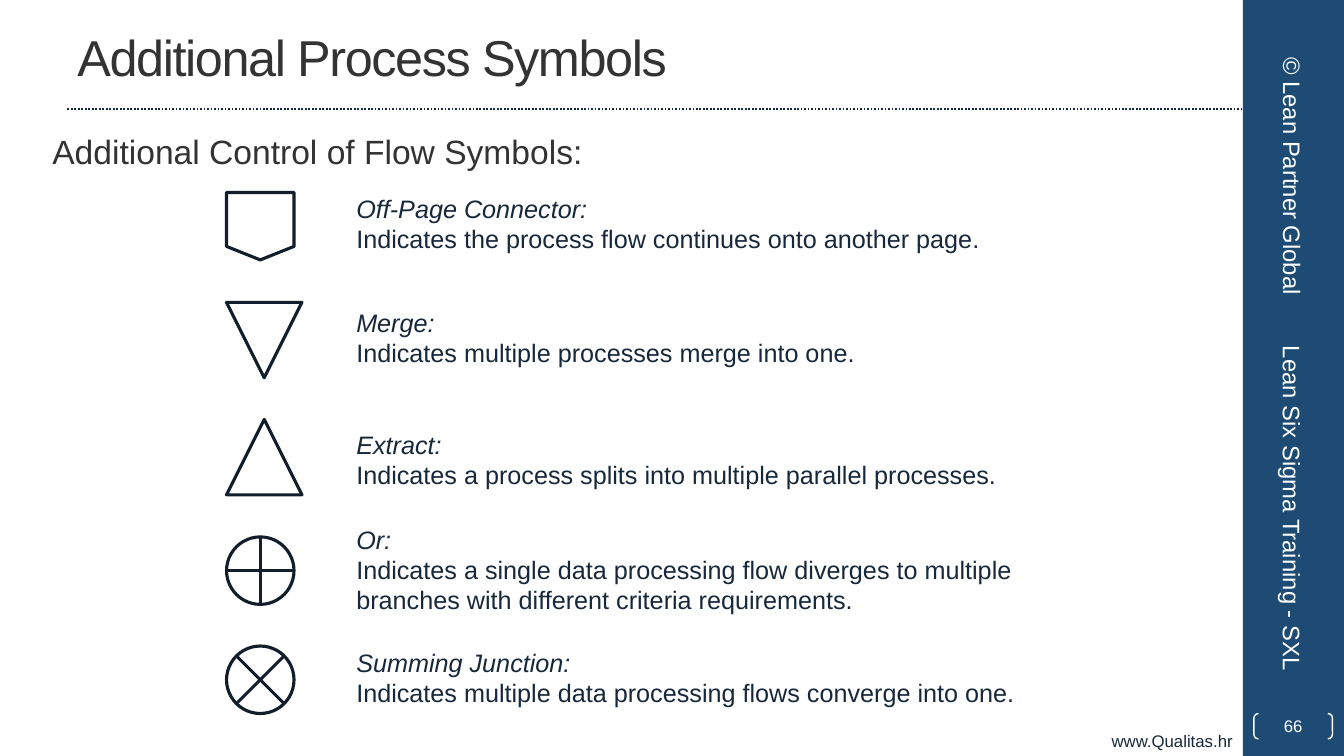
from lxml import etree
from pptx import Presentation
from pptx.dml.color import RGBColor
from pptx.enum import dml, shapes, text
from pptx.oxml import ns
from pptx.util import Cm, Pt

NAVY = RGBColor(0x18, 0x28, 0x3B)
OUTLINE = RGBColor(0x12, 0x1E, 0x2C)
RULE = RGBColor(0x17, 0x27, 0x3B)
CHARCOAL = RGBColor(0x33, 0x33, 0x33)
BLUE = RGBColor(0x1D, 0x4B, 0x74)
WHITE = RGBColor(0xFF, 0xFF, 0xFF)
LEFT, CENTER, RIGHT = text.PP_ALIGN.LEFT, text.PP_ALIGN.CENTER, text.PP_ALIGN.RIGHT
TOP, MIDDLE = text.MSO_ANCHOR.TOP, text.MSO_ANCHOR.MIDDLE
KIND = shapes.MSO_SHAPE

prs = Presentation()
prs.slide_width, prs.slide_height = Cm(33.87), Cm(19.05)
slide = prs.slides.add_slide(prs.slide_layouts[6])


def write(shape, lines, size, color, align=LEFT, anchor=TOP):
    frame = shape.text_frame
    frame.word_wrap = True
    frame.vertical_anchor = anchor
    frame.text = "\n".join(lines)
    for paragraph in frame.paragraphs:
        paragraph.alignment = align
        paragraph.font.name = "Arial"
        paragraph.font.size = Pt(size)
        paragraph.font.color.rgb = color
    return frame.paragraphs


def add_box(left, top, width, height):
    return slide.shapes.add_textbox(Cm(left), Cm(top), Cm(width), Cm(height))


# Side band
band = slide.shapes.add_shape(KIND.RECTANGLE, Cm(31.32), 0, Cm(2.55), Cm(19.05))
band.shadow.inherit = False
band.fill.solid()
band.fill.fore_color.rgb = BLUE
band.line.fill.background()

# Web address and dotted rule
write(add_box(0, 18.28, 31.32, 0.77), ["www.Qualitas.hr"], 12, NAVY, RIGHT)
rule = slide.shapes.add_connector(
    shapes.MSO_CONNECTOR.STRAIGHT, Cm(1.7), Cm(2.74), Cm(31.32), Cm(2.74))
rule.line.color.rgb = RULE
rule.line.width = Pt(1.25)
rule.line.dash_style = dml.MSO_LINE.ROUND_DOT
etree.SubElement(rule._element.spPr, ns.qn("a:effectLst"))

# Title
title = write(add_box(1.7, 0.08, 28.22, 2.67),
              ["Additional Process Symbols"], 36, CHARCOAL, anchor=MIDDLE)[0]
title.runs[0]._r.get_or_add_rPr().set("spc", "-100")

# Bulleted heading
heading_box = add_box(1.07, 3.18, 29.92, 1.2)
heading_format = heading_box.text_frame.paragraphs[0]._p.get_or_add_pPr()
heading_format.set("marL", str(Cm(0.95)))
heading_format.set("indent", str(Cm(-0.64)))
bullet_color = etree.SubElement(heading_format, ns.qn("a:buClr"))
etree.SubElement(bullet_color, ns.qn("a:srgbClr"), val=str(NAVY))
etree.SubElement(heading_format, ns.qn("a:buFont"), typeface="Arial")
etree.SubElement(heading_format, ns.qn("a:buChar"), char="•")
write(heading_box, ["Additional Control of Flow Symbols:"], 24, CHARCOAL)

# Page number in brackets
page_number = slide.shapes.add_shape(
    KIND.DOUBLE_BRACKET, Cm(31.6), Cm(17.98), Cm(1.98), Cm(0.64))
page_number.shadow.inherit = False
page_number.adjustments[0] = 0.18
page_number.fill.background()
page_number.line.color.rgb = WHITE
page_number.line.width = Pt(1)
frame = page_number.text_frame
frame.margin_left = frame.margin_right = frame.margin_top = frame.margin_bottom = 0
write(page_number, ["66"], 12, WHITE, CENTER, MIDDLE)

# Turned lines on the band
for left, top, width, line, align in [
    (28.55, 3.76, 8.05, "© Lean Partner Global", CENTER),
    (27.91, 12.45, 9.32, "Lean Six Sigma Training - SXL", LEFT),
]:
    side_line = add_box(left, top, width, 1.35)
    side_line.rotation = 90
    write(side_line, [line], 17, WHITE, align, MIDDLE)

# Symbols with their meanings: kind, symbol top, symbol size, text top, name, meaning
SMALL, LARGE = 1.7, 1.9
symbols = [
    (KIND.FLOWCHART_OFFPAGE_CONNECTOR, 4.85, SMALL, 4.75, "Off-Page Connector:",
     "Indicates the process flow continues onto another page."),
    (KIND.FLOWCHART_MERGE, 7.62, LARGE, 7.62, "Merge:",
     "Indicates multiple processes merge into one."),
    (KIND.FLOWCHART_EXTRACT, 10.57, LARGE, 10.69, "Extract:",
     "Indicates a process splits into multiple parallel processes."),
    (KIND.FLOWCHART_OR, 13.53, SMALL, 13.08, "Or:",
     "Indicates a single data processing flow diverges to multiple "
     "branches with different criteria requirements."),
    (KIND.FLOWCHART_SUMMING_JUNCTION, 16.28, SMALL, 16.18, "Summing Junction:",
     "Indicates multiple data processing flows converge into one."),
]
for kind, symbol_top, size, text_top, name, meaning in symbols:
    symbol = slide.shapes.add_shape(kind, Cm(5.71), Cm(symbol_top), Cm(size), Cm(size))
    symbol.shadow.inherit = False
    symbol.fill.background()
    symbol.line.color.rgb = OUTLINE
    symbol.line.width = Pt(2.25)
    name_line, _ = write(add_box(8.73, text_top, 17.78, 1.8), [name, meaning], 18, NAVY)
    name_line.font.italic = True

prs.save("out.pptx")
